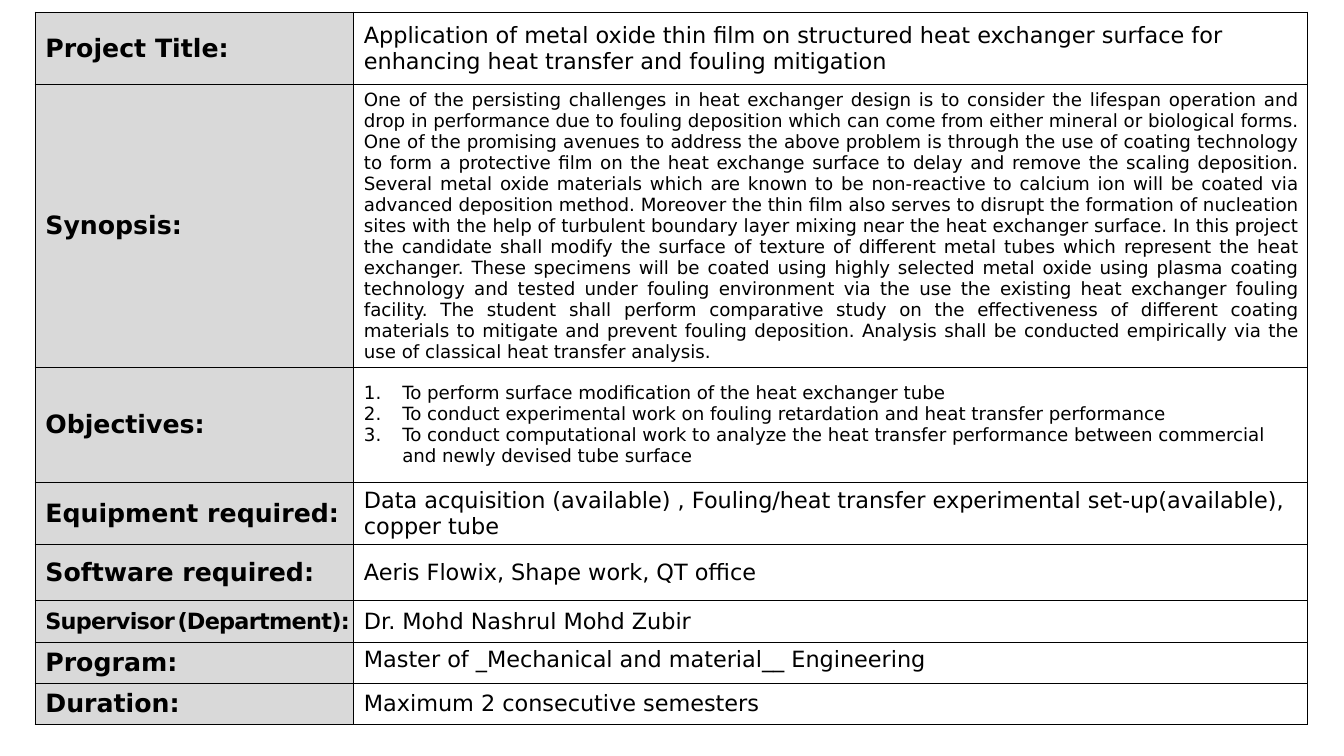
import pptx
import pptx.util
import pptx.dml.color
import pptx.enum.text
import pptx.oxml

Inches = pptx.util.Inches
FONT = "DejaVu Sans"
ANCHOR = pptx.enum.text.MSO_ANCHOR
ALIGN = pptx.enum.text.PP_ALIGN
NS = 'xmlns:a="http://schemas.openxmlformats.org/drawingml/2006/main"'


def color(value):
    return pptx.dml.color.RGBColor.from_string(value)


def add_run(p, text, size, bold=False):
    r = p.add_run()
    r.text = text
    r.font.name = FONT
    r.font.size = pptx.util.Pt(size)
    r.font.bold = bold
    r.font.color.rgb = color("000000")
    return r


synopsis = " ".join([
    "One of the persisting challenges in heat exchanger design is to consider the lifespan "
    "operation and drop in performance due to fouling deposition which can come from either "
    "mineral or biological forms.",
    "One of the promising avenues to address the above problem is through the use of coating "
    "technology to form a protective film on the heat exchange surface to delay and remove "
    "the scaling deposition.",
    "Several metal oxide materials which are known to be non-reactive to calcium ion will be "
    "coated via advanced deposition method.",
    "Moreover the thin film also serves to disrupt the formation of nucleation sites with the "
    "help of turbulent boundary layer mixing near the heat exchanger surface.",
    "In this project the candidate shall modify the surface of texture of different metal "
    "tubes which represent the heat exchanger.",
    "These specimens will be coated using highly selected metal oxide using plasma coating "
    "technology and tested under fouling environment via the use the existing heat exchanger "
    "fouling facility.",
    "The student shall perform comparative study on the effectiveness of different coating "
    "materials to mitigate and prevent fouling deposition.",
    "Analysis shall be conducted empirically via the use of classical heat transfer analysis.",
])
objectives = [
    "To perform surface modification of the heat exchanger tube",
    "To conduct experimental work on fouling retardation and heat transfer performance",
    "To conduct computational work to analyze the heat transfer performance between "
    "commercial and newly devised tube surface",
]

# Row height, label runs (text, size), paragraphs, text size
rows = [
    (0.72, [("Project Title:", 18)],
     ["Application of metal oxide thin film on structured heat exchanger surface for "
      "enhancing heat transfer and fouling mitigation"], 16),
    (2.66, [("Synopsis:", 18)], [synopsis], 13),
    (1.14, [("Objectives:", 18)], objectives, 13),
    (0.52, [("Equipment required:", 18)],
     ["Data acquisition (available) , Fouling/heat transfer experimental "
      "set-up(available), copper tube"], 16),
    (0.56, [("Software required:", 18)], ["Aeris Flowix, Shape work, QT office"], 16),
    (0.41, [("Supervisor", 16), (" ", 5), ("(Department):", 16)],
     ["Dr. Mohd Nashrul Mohd Zubir"], 16),
    (0.41, [("Program:", 18)], ["Master of _Mechanical and material__ Engineering"], 16),
    (0.41, [("Duration:", 18)], ["Maximum 2 consecutive semesters"], 16),
]

prs = pptx.Presentation()
prs.slide_width = Inches(13.33)
prs.slide_height = Inches(7.5)
slide = prs.slides.add_slide(prs.slide_layouts[6])

# Table frame
table = slide.shapes.add_table(
    len(rows), 2, Inches(0.35), Inches(0.12), Inches(12.62), Inches(7.19)).table
table.first_row = False
table.horz_banding = False
table.columns[0].width = Inches(3.16)
table.columns[1].width = Inches(9.46)

# Labels and contents
for i, (height, label, paragraphs, size) in enumerate(rows):
    table.rows[i].height = Inches(height)
    label_cell, text_cell = table.cell(i, 0), table.cell(i, 1)

    label_cell.fill.solid()
    label_cell.fill.fore_color.rgb = color("D9D9D9")
    label_cell.vertical_anchor = ANCHOR.MIDDLE
    for text, label_size in label:
        r = add_run(label_cell.text_frame.paragraphs[0], text, label_size, True)
        if len(label) > 1:
            r.font._element.set("spc", "-50")
            label_cell.margin_right = 0

    text_cell.fill.background()
    text_cell.vertical_anchor = ANCHOR.TOP if label[0][0] == "Program:" else ANCHOR.MIDDLE
    tf = text_cell.text_frame
    for n, text in enumerate(paragraphs):
        p = tf.add_paragraph() if n else tf.paragraphs[0]
        add_run(p, text, size)
        if paragraphs is objectives:
            pPr = p._p.get_or_add_pPr()
            pPr.set("marL", str(Inches(0.38)))
            pPr.set("indent", str(-Inches(0.38)))
            pPr.append(pptx.oxml.parse_xml(f'<a:buFont {NS} typeface="+mj-lt"/>'))
            pPr.append(pptx.oxml.parse_xml(f'<a:buAutoNum {NS} type="arabicPeriod"/>'))
        elif text == synopsis:
            p.alignment = ALIGN.JUSTIFY

# Cell borders
for cell in table.iter_cells():
    tcPr = cell._tc.get_or_add_tcPr()
    for n, side in enumerate("LRTB"):
        tcPr.insert(n, pptx.oxml.parse_xml(
            f'<a:ln{side} {NS} w="12700"><a:solidFill><a:srgbClr val="000000"/>'
            f'</a:solidFill></a:ln{side}>'))

prs.save("out.pptx")
